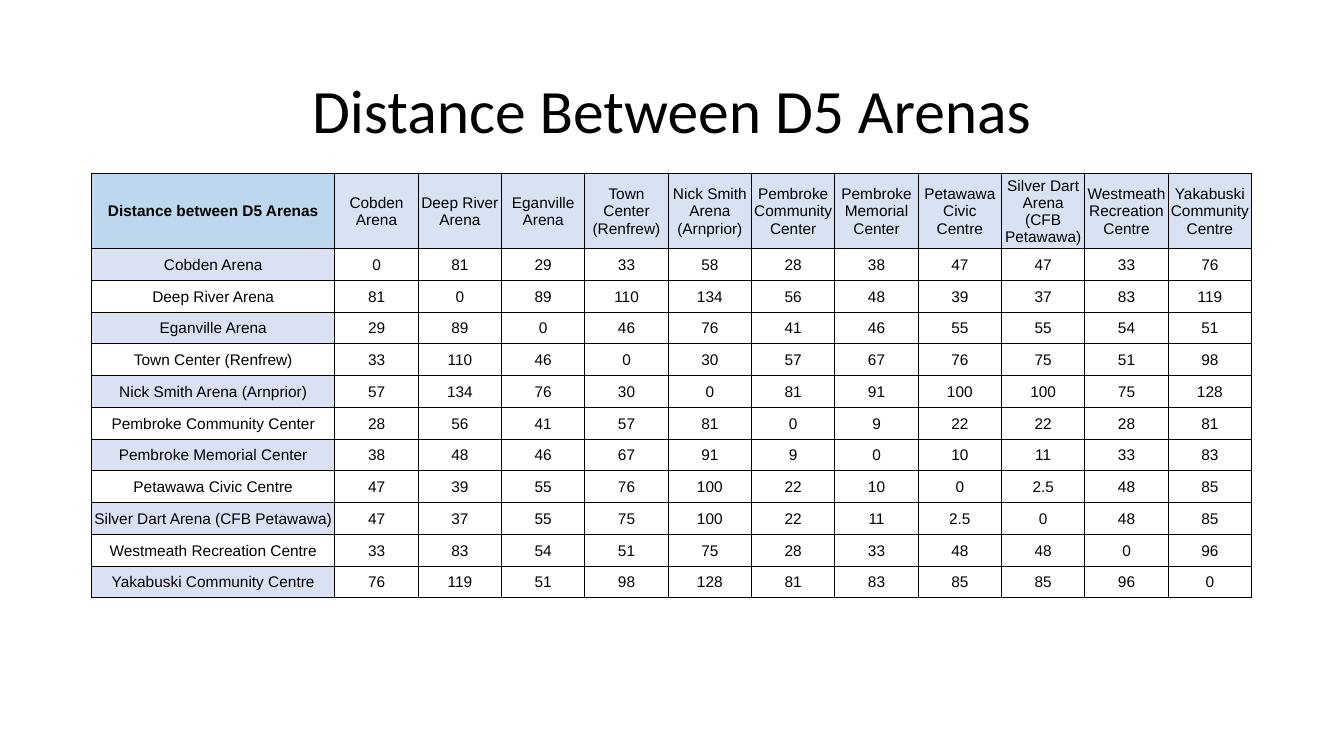
from lxml import etree
from pptx import Presentation
from pptx import util as u
from pptx.dml.color import RGBColor
from pptx.enum import text
from pptx.oxml import ns

ARENAS = [
    "Cobden Arena", "Deep River Arena", "Eganville Arena",
    "Town Center (Renfrew)", "Nick Smith Arena (Arnprior)",
    "Pembroke Community Center", "Pembroke Memorial Center",
    "Petawawa Civic Centre", "Silver Dart Arena (CFB Petawawa)",
    "Westmeath Recreation Centre", "Yakabuski Community Centre",
]
DISTANCES = [
    [0, 81, 29, 33, 58, 28, 38, 47, 47, 33, 76],
    [81, 0, 89, 110, 134, 56, 48, 39, 37, 83, 119],
    [29, 89, 0, 46, 76, 41, 46, 55, 55, 54, 51],
    [33, 110, 46, 0, 30, 57, 67, 76, 75, 51, 98],
    [57, 134, 76, 30, 0, 81, 91, 100, 100, 75, 128],
    [28, 56, 41, 57, 81, 0, 9, 22, 22, 28, 81],
    [38, 48, 46, 67, 91, 9, 0, 10, 11, 33, 83],
    [47, 39, 55, 76, 100, 22, 10, 0, 2.5, 48, 85],
    [47, 37, 55, 75, 100, 22, 11, 2.5, 0, 48, 85],
    [33, 83, 54, 51, 75, 28, 33, 48, 48, 0, 96],
    [76, 119, 51, 98, 128, 81, 83, 85, 85, 96, 0],
]


class ArenaSlide:
    """Holds the style and the current page, and draws its elements."""

    colours = {"ink": "000000", "corner": "BDD7EE", "header": "D8E2F3", "band": "D9E1F2"}

    def __init__(self, page):
        self.page = page

    def label(self, para, words, font, size, bold=False):
        para.text = words
        para.alignment = text.PP_ALIGN.CENTER
        for span in para.runs:
            span.font.name = font
            span.font.size = u.Pt(size)
            span.font.bold = bold
            span.font.color.rgb = RGBColor.from_string(self.colours["ink"])

    def title(self, words, left, top, width, height):
        box = self.page.shapes.add_textbox(u.Cm(left), u.Cm(top), u.Cm(width), u.Cm(height))
        frame = box.text_frame
        frame.word_wrap = True
        frame.vertical_anchor = text.MSO_ANCHOR.MIDDLE
        para = frame.paragraphs[0]
        para.line_spacing = 0.9
        self.label(para, words, "Calibri", 44)

    def border(self, cell):
        properties = cell._tc.get_or_add_tcPr()
        for side in ("a:lnL", "a:lnR", "a:lnT", "a:lnB"):
            line = etree.SubElement(properties, ns.qn(side), w=str(u.Pt(0.75)))
            fill = etree.SubElement(line, ns.qn("a:solidFill"))
            etree.SubElement(fill, ns.qn("a:srgbClr"), val=self.colours["ink"])

    def cell(self, cell, words, colour, bold):
        cell.margin_left = cell.margin_right = cell.margin_top = u.Cm(0.03)
        cell.margin_bottom = 0
        cell.vertical_anchor = text.MSO_ANCHOR.MIDDLE
        self.label(cell.text_frame.paragraphs[0], words, "Arial", 11, bold)
        self.border(cell)
        if colour:
            cell.fill.solid()
            cell.fill.fore_color.rgb = RGBColor.from_string(self.colours[colour])
        else:
            cell.fill.background()

    def fill_name(self, row, column):
        if row == 0:
            return "header" if column else "corner"
        return "band" if column == 0 and row % 2 else None

    def table(self, rows, left, top, widths, heights):
        frame = self.page.shapes.add_table(
            len(rows), len(widths), u.Cm(left), u.Cm(top),
            u.Cm(sum(widths)), u.Cm(sum(heights)))
        grid = frame.table
        for column, width in zip(grid.columns, widths):
            column.width = u.Cm(width)
        for row, height in zip(grid.rows, heights):
            row.height = u.Cm(height)
        for r, values in enumerate(rows):
            for c, value in enumerate(values):
                self.cell(grid.cell(r, c), str(value), self.fill_name(r, c), r == c == 0)


def main():
    deck = Presentation()
    deck.slide_width, deck.slide_height = u.Cm(33.87), u.Cm(19.05)
    slide = ArenaSlide(deck.slides.add_slide(deck.slide_layouts[6]))
    slide.title("Distance Between D5 Arenas", 2.33, 1.01, 29.21, 3.68)
    rows = [["Distance between D5 Arenas", *ARENAS]]
    rows += [[arena, *values] for arena, values in zip(ARENAS, DISTANCES)]
    count = len(ARENAS)
    slide.table(rows, 2.31, 4.37, [6.13] + [2.1] * count, [1.52] + [0.8] * count)
    deck.save("out.pptx")


if __name__ == "__main__":
    main()
